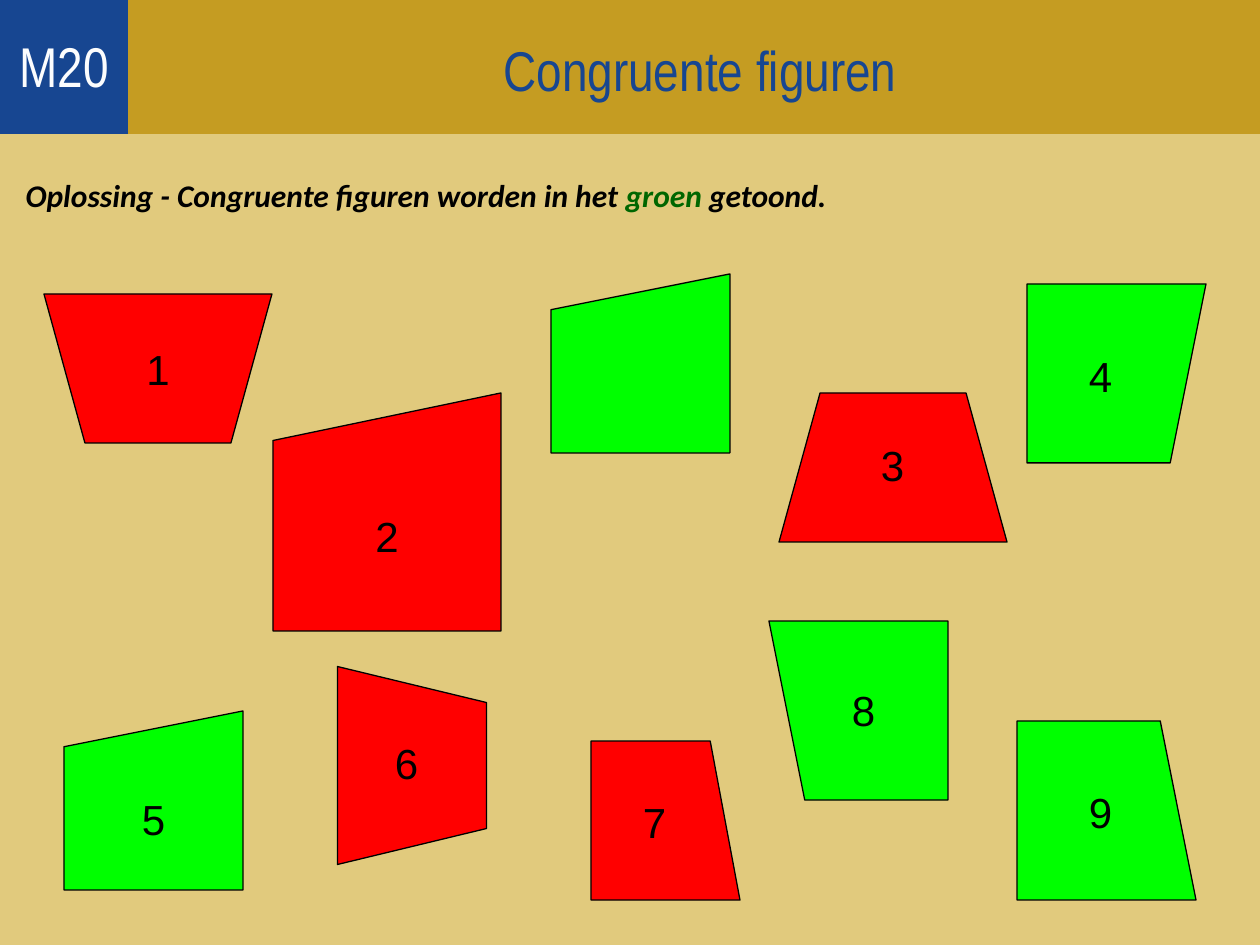
from dataclasses import dataclass
from typing import Optional

from pptx import Presentation
from pptx.dml.color import RGBColor
from pptx.enum.shapes import MSO_SHAPE as Preset
from pptx.enum.text import MSO_ANCHOR as Anchor, MSO_AUTO_SIZE as AutoSize, PP_ALIGN as Align
from pptx.oxml.ns import qn
from pptx.util import Emu, Pt

EMU_PER_PX = 914400 / 126
SAND = RGBColor(0xE1, 0xCA, 0x7D)
GOLD = RGBColor(0xC5, 0x9C, 0x22)
BLUE = RGBColor(0x17, 0x46, 0x91)
WHITE = RGBColor(0xFC, 0xFD, 0xFE)
BLACK = RGBColor(0, 0, 0)
RED = RGBColor(0xFF, 0, 0)
GREEN = RGBColor(0, 0xFF, 0)
DARK_GREEN = RGBColor(0, 0x66, 0)

NUMBER_FORMAT = {"size": Pt(24), "name": "Arial"}
BANNER_FORMAT = {"size": Pt(32), "name": "Arial Narrow"}
TITLE_FORMAT = {"size": Pt(18), "name": "Calibri", "bold": True, "italic": True}
LABEL_SIZE = (49, 63)
TRAPEZOID_INSET = 0.18


@dataclass(frozen=True)
class Figure:
    """A quadrilateral; its box is the one before rotation."""
    number: str
    box: tuple[int, int, int, int]
    color: RGBColor
    trapezoid: bool = False
    rotation: int = 0
    flipped: bool = False
    label_at: Optional[tuple[int, int]] = None


FIGURES = (
    Figure("2", (273, 393, 228, 238), RED),
    Figure("5", (64, 711, 179, 179), GREEN),
    Figure("1", (44, 294, 228, 149), RED, trapezoid=True),
    Figure("", (551, 274, 179, 179), GREEN),
    Figure("3", (779, 393, 228, 149), RED, True, 180, label_at=(868, 433)),
    Figure("4", (1027, 284, 179, 179), GREEN, False, 270, True, (1076, 344)),
    Figure("6", (313, 691, 198, 149), RED, True, 270, label_at=(382, 731)),
    Figure("7", (586, 746, 159, 149), RED, False, 90, label_at=(630, 790)),
    Figure("8", (769, 621, 179, 179), GREEN, False, 270, label_at=(839, 678)),
    Figure("9", (1017, 721, 179, 179), GREEN, False, 90, label_at=(1076, 780)),
)


def px(length: float) -> Emu:
    return Emu(round(length * EMU_PER_PX))


def add_run(paragraph, text: str, color: RGBColor, font_format: dict) -> None:
    run = paragraph.add_run()
    run.text = text
    for name, value in font_format.items():
        setattr(run.font, name, value)
    run.font.color.rgb = color


def write_centred(shape, text: str, color: RGBColor, font_format: dict, wrap: bool) -> None:
    frame = shape.text_frame
    frame.word_wrap = wrap
    frame.vertical_anchor = Anchor.MIDDLE
    paragraph = frame.paragraphs[0]
    paragraph.alignment = Align.CENTER
    add_run(paragraph, text, color, font_format)


def add_trapezoid(slide, box: tuple[int, int, int, int]):
    """Draw a trapezoid with its long side on top."""
    left, top, width, height = box
    inset = round(width * TRAPEZOID_INSET)
    right, bottom = left + width, top + height
    builder = slide.shapes.build_freeform(left, top, scale=EMU_PER_PX)
    builder.add_line_segments([(left + inset, bottom), (right - inset, bottom), (right, top)])
    return builder.convert_to_shape()


def draw_figure(slide, figure: Figure) -> None:
    if figure.trapezoid:
        shape = add_trapezoid(slide, figure.box)
    else:
        shape = slide.shapes.add_shape(Preset.FLOWCHART_MANUAL_INPUT, *map(px, figure.box))
    shape.shadow.inherit = False
    shape.fill.solid()
    shape.fill.fore_color.rgb = figure.color
    shape.line.color.rgb = BLACK
    shape.line.width = Pt(0.75)
    shape.rotation = figure.rotation
    if figure.flipped:
        shape.element.spPr.find(qn("a:xfrm")).set("flipV", "1")

    # Numbers on turned figures stay upright in a box of their own.
    if figure.label_at:
        shape = slide.shapes.add_textbox(*map(px, figure.label_at + LABEL_SIZE))
    if figure.number:
        write_centred(shape, figure.number, BLACK, NUMBER_FORMAT, wrap=False)


def add_banner(slide, width: int, fill: RGBColor, text: str, color: RGBColor):
    banner = slide.shapes.add_shape(Preset.RECTANGLE, *map(px, (0, -3, width, 137)))
    banner.shadow.inherit = False
    banner.fill.solid()
    banner.fill.fore_color.rgb = fill
    banner.line.fill.background()
    write_centred(banner, text, color, BANNER_FORMAT, wrap=True)
    return banner


def write_title(title) -> None:
    title.left, title.top, title.width, title.height = map(px, (13, 165, 1033, 59))
    frame = title.text_frame
    frame.auto_size = AutoSize.NONE
    frame.word_wrap = True
    frame.vertical_anchor = Anchor.MIDDLE
    paragraph = frame.paragraphs[0]
    paragraph.alignment = Align.LEFT
    for text, color in (
        ("Oplossing - Congruente figuren worden in het ", BLACK),
        ("groen", DARK_GREEN),
        (" getoond.", BLACK),
    ):
        add_run(paragraph, text, color, TITLE_FORMAT)


def main() -> None:
    presentation = Presentation()
    presentation.slide_width, presentation.slide_height = px(1260), px(945)
    slide = presentation.slides.add_slide(presentation.slide_layouts[5])
    slide.background.fill.solid()
    slide.background.fill.fore_color.rgb = SAND

    write_title(slide.shapes.title)
    for figure in FIGURES:
        draw_figure(slide, figure)
    heading = add_banner(slide, 1260, GOLD, "Congruente figuren", BLUE)
    heading.text_frame.margin_left = px(153)
    heading.text_frame.margin_top = px(13)
    add_banner(slide, 128, BLUE, "M20", WHITE)

    presentation.save("out.pptx")


if __name__ == "__main__":
    main()
